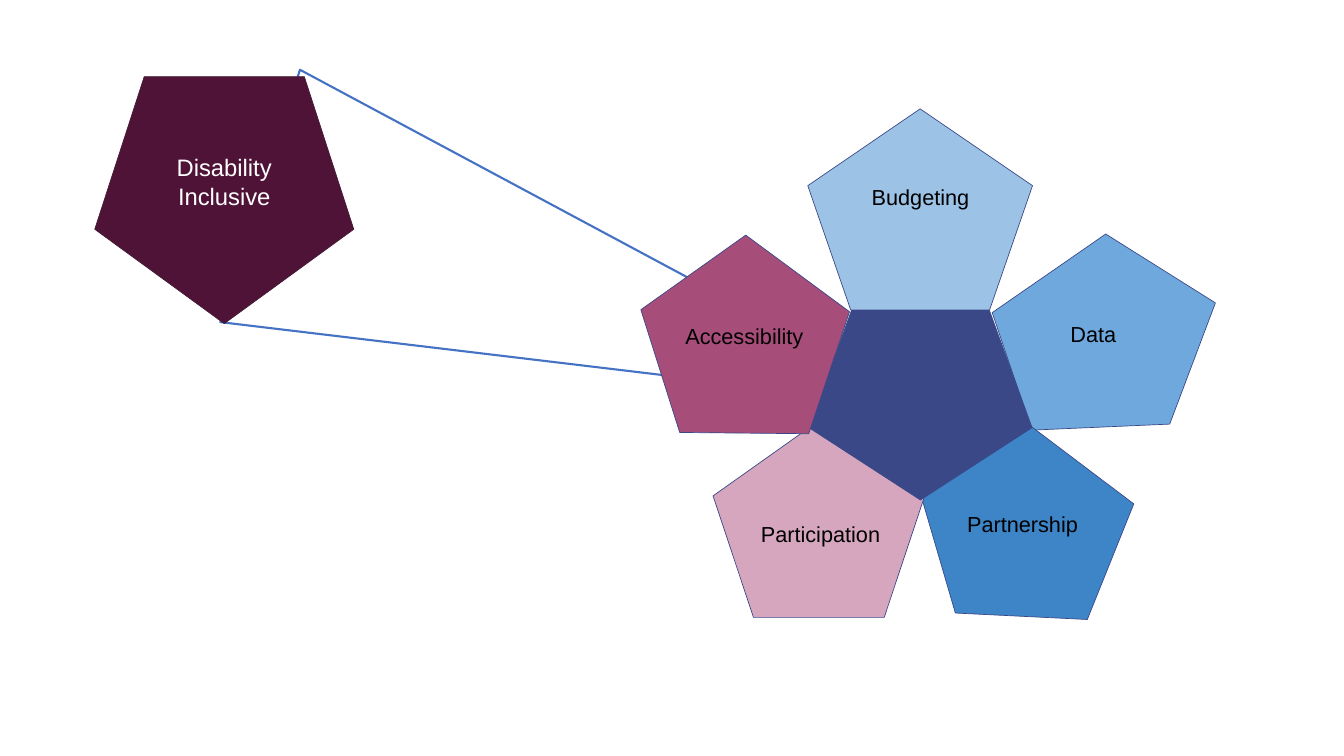
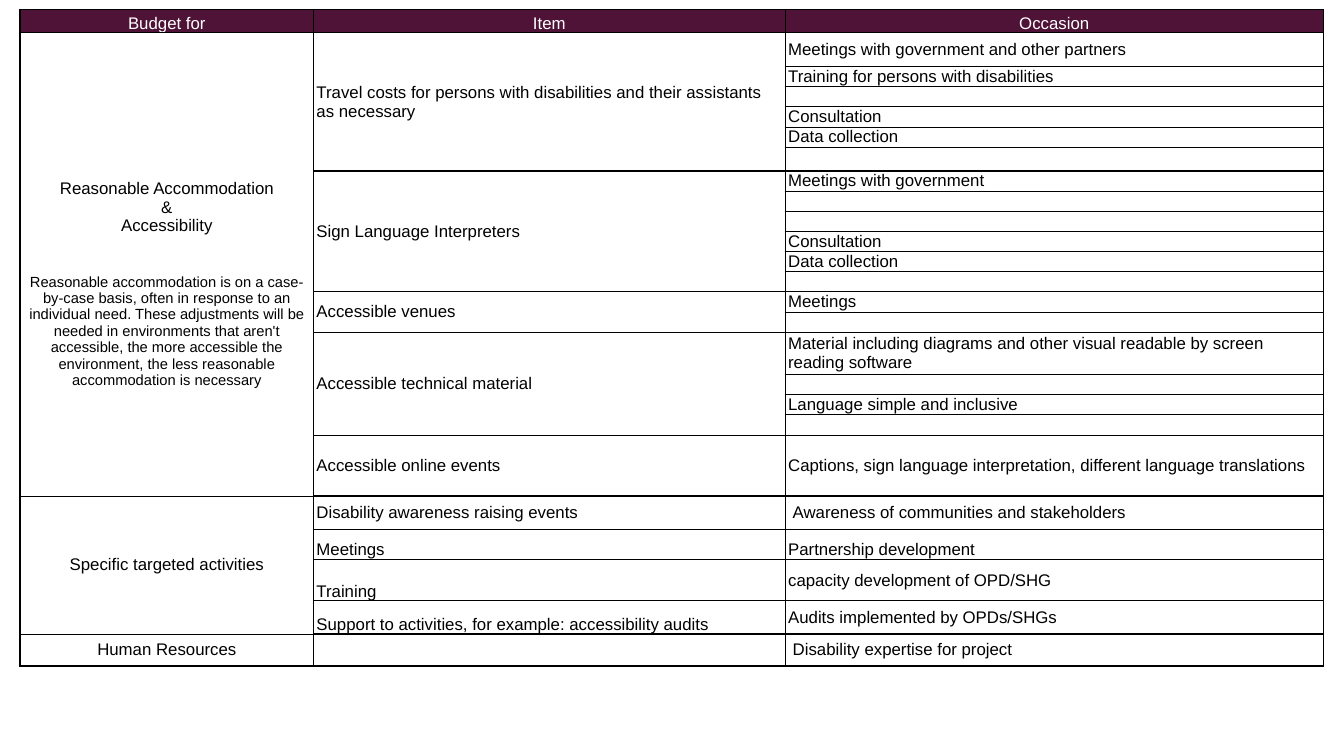
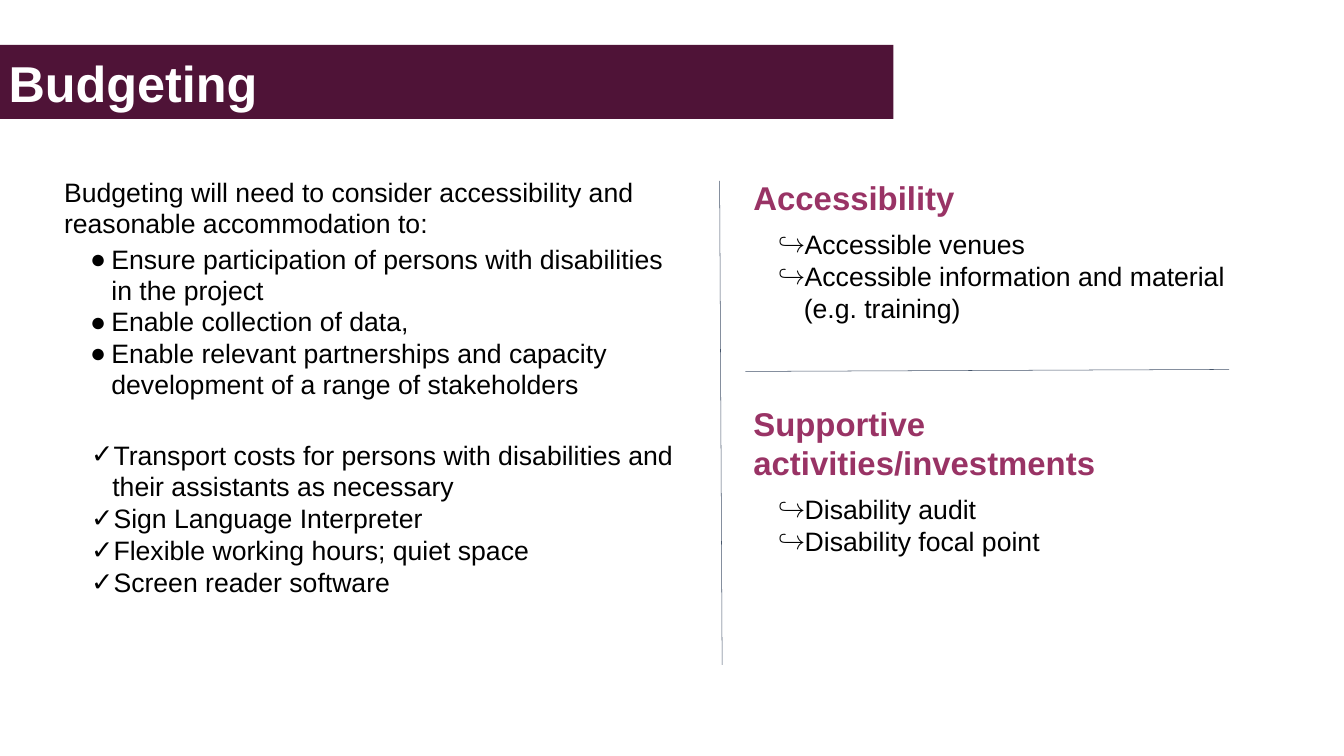
from lxml import etree
from pptx import Presentation
from pptx import util as u
from pptx.dml.color import RGBColor
from pptx.enum import shapes as es, text as et
from pptx.oxml import ns

PX = 9144
FONT = "Arial"
PLUM = RGBColor(0x4F, 0x13, 0x37)
PLUM_EDGE = RGBColor(0x43, 0x1C, 0x35)
BERRY = RGBColor(0xA6, 0x4D, 0x79)
ROSE = RGBColor(0xD5, 0xA6, 0xBD)
HEADING = RGBColor(0x99, 0x33, 0x65)
NAVY = RGBColor(0x3A, 0x48, 0x88)
PALE_BLUE = RGBColor(0x9C, 0xC2, 0xE5)
SKY_BLUE = RGBColor(0x6F, 0xA8, 0xDC)
MID_BLUE = RGBColor(0x3D, 0x85, 0xC6)
LINK_BLUE = RGBColor(0x44, 0x72, 0xC4)
SLATE = RGBColor(0x44, 0x54, 0x6A)
BLACK = RGBColor(0, 0, 0)
WHITE = RGBColor(255, 255, 255)
CENTER, LEFT = et.PP_ALIGN.CENTER, et.PP_ALIGN.LEFT
TOP, MIDDLE, BOTTOM = et.MSO_ANCHOR.TOP, et.MSO_ANCHOR.MIDDLE, et.MSO_ANCHOR.BOTTOM

PETALS = [
    ((759, 240, 398, 426), 71.4, SKY_BLUE),
    ((572, 629, 424, 378), 2.8, MID_BLUE),
    ((163, 619, 420, 390), 0, ROSE),
    ((351, 0, 446, 399), 0, PALE_BLUE),
    ((353, 400, 443, 376), 180, NAVY),
    ((0, 264, 413, 394), 288.5, BERRY),
]
PETAL_LABELS = [
    ("Budgeting", (397, 144, 355, 62), CENTER),
    ("Data", (754, 415, 327, 62), CENTER),
    ("Partnership", (585, 793, 384, 62), CENTER),
    ("Participation", (248, 813, 263, 62), LEFT),
    ("Accessibility", (74, 419, 302, 62), CENTER),
]

COLUMN_WIDTHS = [582, 936, 1068]
ROW_HEIGHTS = [46, 67, 40, 40, 40, 40, 47] + [40] * 8 + [84, 40, 40, 40, 121, 67, 59, 82, 66, 63]
THICK_EDGES = {7, 20, 24}
BOTTOM_CELLS = {(0, 0), (0, 1), (0, 2), (21, 1), (21, 2), (22, 1), (23, 1)}
INDENTED_CELLS = {(20, 2), (24, 2)}
ACCOMMODATION = ["Reasonable Accommodation", "&", "Accessibility"]
ACCOMMODATION_NOTE = (
    "Reasonable accommodation is on a case-by-case basis, often in response to an individual need. "
    "These adjustments will be needed in environments that aren't accessible, the more accessible "
    "the environment, the less reasonable accommodation is necessary"
)
BUDGET_COLUMNS = [
    [
        ("Budget for", 1),
        ("\n".join(ACCOMMODATION + [ACCOMMODATION_NOTE]), 19),
        ("Specific targeted activities", 4),
        ("Human Resources", 1),
    ],
    [
        ("Item", 1),
        ("Travel costs for persons with disabilities and their assistants as necessary", 6),
        ("Sign Language Interpreters", 6),
        ("Accessible venues", 2),
        ("Accessible technical material", 4),
        ("Accessible online events", 1),
        ("Disability awareness raising events", 1),
        ("Meetings", 1),
        ("Training", 1),
        ("Support to activities, for example: accessibility audits", 1),
        ("", 1),
    ],
    [(occasion, 1) for occasion in (
        "Occasion",
        "Meetings with government and other partners", "Training for persons with disabilities", "",
        "Consultation", "Data collection", "",
        "Meetings with government", "", "", "Consultation", "Data collection", "",
        "Meetings", "",
        "Material including diagrams and other visual readable by screen reading software", "",
        "Language simple and inclusive", "",
        "Captions, sign language interpretation, different language translations",
        "Awareness of communities and stakeholders",
        "Partnership development",
        "capacity development of OPD/SHG",
        "Audits implemented by OPDs/SHGs",
        "Disability expertise for project",
    )],
]


def emu(box):
    return [v * PX for v in box]


def inside(origin, box):
    return (origin[0] + box[0], origin[1] + box[1], box[2], box[3])


def set_font(p, size, color, bold=False):
    for r in p.runs:
        r.font.name, r.font.size, r.font.bold = FONT, u.Pt(size), bold
        r.font.color.rgb = color


def set_insets(tf, left, top, right, bottom):
    tf.margin_left, tf.margin_top, tf.margin_right, tf.margin_bottom = emu((left, top, right, bottom))


def add_preset(shapes, kind, box, rotation, fill, line, width):
    sp = shapes.add_shape(kind, *emu(box))
    sp.shadow.inherit = False
    sp.rotation = rotation
    sp.fill.solid()
    sp.fill.fore_color.rgb = fill
    sp.line.color.rgb = line
    sp.line.width = u.Pt(width)
    return sp


def add_label(shapes, label, box, size, color, align=CENTER):
    tf = shapes.add_textbox(*emu(box)).text_frame
    tf.word_wrap = True
    set_insets(tf, 10, 5, 10, 5)
    p = tf.paragraphs[0]
    p.text = label
    p.alignment = align
    set_font(p, size, color)


def add_flower(shapes, origin):
    for box, rotation, fill in PETALS:
        add_preset(shapes, es.MSO_SHAPE.REGULAR_PENTAGON, inside(origin, box), rotation, fill, NAVY, 1)
    for label, box, align in PETAL_LABELS:
        add_label(shapes, label, inside(origin, box), 31, BLACK, align)


def add_callout(shapes, box):
    add_preset(shapes, es.MSO_SHAPE.REGULAR_PENTAGON, box, 180, PLUM, PLUM_EDGE, 1)
    add_label(shapes, "Disability Inclusive", inside(box, (77, 146, 360, 125)), 34, WHITE)


def flower_slide(prs):
    s = prs.slides.add_slide(prs.slide_layouts[6])
    shapes = s.shapes.add_group_shape().shapes
    beam = add_preset(shapes, es.MSO_SHAPE.TRAPEZOID, (765, 14, 525, 1072), 107.5, WHITE, LINK_BLUE, 3)
    beam.adjustments[0] = 0.385
    add_flower(shapes, (1252, 216))
    add_callout(shapes, (188, 152, 514, 490))


def set_borders(cell, widths):
    tcPr = cell._tc.get_or_add_tcPr()
    for side, width in zip("LRTB", widths):
        ln = etree.SubElement(tcPr, ns.qn("a:ln" + side), w=str(u.Pt(width)))
        fill = etree.SubElement(ln, ns.qn("a:solidFill"))
        etree.SubElement(fill, ns.qn("a:srgbClr"), val=str(BLACK))


def edge_width(edge, col):
    if edge in (0, len(ROW_HEIGHTS)):
        return 2.25
    return 3 if edge in THICK_EDGES and col else 1.5


def fill_cell(cell, row, col, span, content):
    last_col = len(COLUMN_WIDTHS) - 1
    set_borders(cell, (1.5 if col else 2.25, 2.25 if col == last_col else 1.5,
                       edge_width(row, col), edge_width(row + span, col)))
    if row == 0:
        cell.fill.solid()
        cell.fill.fore_color.rgb = PLUM
    else:
        cell.fill.background()
    set_insets(cell, 15 if (row, col) in INDENTED_CELLS else 6, 0, 6, 0)
    cell.vertical_anchor = BOTTOM if (row, col) in BOTTOM_CELLS else MIDDLE
    cell.text_frame.text = content
    for p in cell.text_frame.paragraphs:
        p.alignment = CENTER if row == 0 or col == 0 else LEFT
        set_font(p, 24, BLACK if row else WHITE)
    if content.endswith(ACCOMMODATION_NOTE):
        cell.margin_top = 77 * PX
        note = cell.text_frame.paragraphs[-1]
        note.space_before = u.Pt(55)
        set_font(note, 21, BLACK)


def add_budget_table(s, left, top):
    box = (left, top, sum(COLUMN_WIDTHS), sum(ROW_HEIGHTS))
    tbl = s.shapes.add_table(len(ROW_HEIGHTS), len(COLUMN_WIDTHS), *emu(box)).table
    tbl.first_row = tbl.horz_banding = False
    for column, width in zip(tbl.columns, COLUMN_WIDTHS):
        column.width = width * PX
    for tr, height in zip(tbl.rows, ROW_HEIGHTS):
        tr.height = height * PX
    for col, entries in enumerate(BUDGET_COLUMNS):
        row = 0
        for content, span in entries:
            cell = tbl.cell(row, col)
            if span > 1:
                cell.merge(tbl.cell(row + span - 1, col))
            fill_cell(cell, row, col, span, content)
            row += span


def table_slide(prs):
    s = prs.slides.add_slide(prs.slide_layouts[6])
    add_budget_table(s, 40, 19)


def place(sp, box):
    sp.left, sp.top, sp.width, sp.height = emu(box)
    tf = sp.text_frame
    tf.word_wrap = True
    tf.auto_size = et.MSO_AUTO_SIZE.NONE
    return tf


def set_bullet(p, char, left, indent):
    pPr = p._p.get_or_add_pPr()
    pPr.set("marL", str(left * PX))
    pPr.set("indent", str(indent * PX))
    if char:
        color = etree.SubElement(pPr, ns.qn("a:buClr"))
        etree.SubElement(color, ns.qn("a:srgbClr"), val=str(BLACK))
        etree.SubElement(pPr, ns.qn("a:buChar"), char=char)
    else:
        etree.SubElement(pPr, ns.qn("a:buNone"))


def fill_body(sp, box, items):
    tf = place(sp, box)
    set_insets(tf, 10, 10, 10, 10)
    tf.vertical_anchor = TOP
    tf.text = "\n".join(item[0] for item in items)
    for p, (_, bullet, before, spacing, size, color, bold) in zip(tf.paragraphs, items):
        set_bullet(p, *bullet)
        p.alignment = LEFT
        p.space_before, p.space_after = u.Pt(before), u.Pt(0)
        p.line_spacing = spacing
        set_font(p, size, color, bold)


def bullets(lines, bullet, before, spacing=1.0):
    return [(line, bullet, 0 if i else before, spacing, 38, BLACK, False) for i, line in enumerate(lines)]


def fill_needs(sp, box):
    intro = ("Budgeting will need to consider accessibility and reasonable accommodation to:",
             (None, 4, 0), 0, 0.98, 38, BLACK, False)
    aims = bullets(["Ensure participation of persons with disabilities in the project",
                    "Enable collection of data,",
                    "Enable relevant partnerships and capacity development of a range of stakeholders"],
                   ("●", 98, -42), 6, 0.98)
    costs = bullets(["Transport costs for persons with disabilities and their assistants as necessary",
                     "Sign Language Interpreter",
                     "Flexible working hours; quiet space",
                     "Screen reader software"], ("✓", 100, -42), 54)
    fill_body(sp, box, [intro] + aims + costs)


def fill_topic(sp, box, heading, lines):
    head = (heading, (None, 0, 0), 0, 1.0, 47, HEADING, True)
    fill_body(sp, box, [head] + bullets(lines, ("↪", 100, -51), 16))


def fill_title(sp, box, title):
    tf = place(sp, box)
    sp.fill.solid()
    sp.fill.fore_color.rgb = PLUM
    set_insets(tf, 17, 6, 6, 6)
    tf.vertical_anchor = MIDDLE
    tf.text = title
    tf.paragraphs[0].alignment = LEFT
    set_font(tf.paragraphs[0], 72, WHITE, True)


def add_divider(s, ends):
    cxn = s.shapes.add_connector(es.MSO_CONNECTOR.STRAIGHT, *emu(ends))
    cxn.line.color.rgb = SLATE
    cxn.line.width = u.Pt(0.75)
    etree.SubElement(cxn._element.spPr, ns.qn("a:effectLst"))


def budgeting_slide(prs):
    s = prs.slides.add_slide(prs.slide_layouts[4])
    title, needs, access, support, spare = s.placeholders
    spare._element.getparent().remove(spare._element)
    fill_title(title, (0, 89, 1773, 147), "Budgeting")
    fill_needs(needs, (113, 342, 1240, 995))
    fill_topic(access, (1485, 342, 1069, 339), "Accessibility",
               ["Accessible venues", "Accessible information and material (e.g. training)"])
    fill_topic(support, (1485, 790, 948, 481), "Supportive activities/investments",
               ["Disability audit", "Disability focal point"])
    add_divider(s, (1428, 359, 1433, 1319))
    add_divider(s, (2439, 733, 1479, 737))


def main():
    prs = Presentation()
    prs.slide_width, prs.slide_height = emu((2667, 1500))
    flower_slide(prs)
    table_slide(prs)
    budgeting_slide(prs)
    prs.save("out.pptx")


if __name__ == "__main__":
    main()
